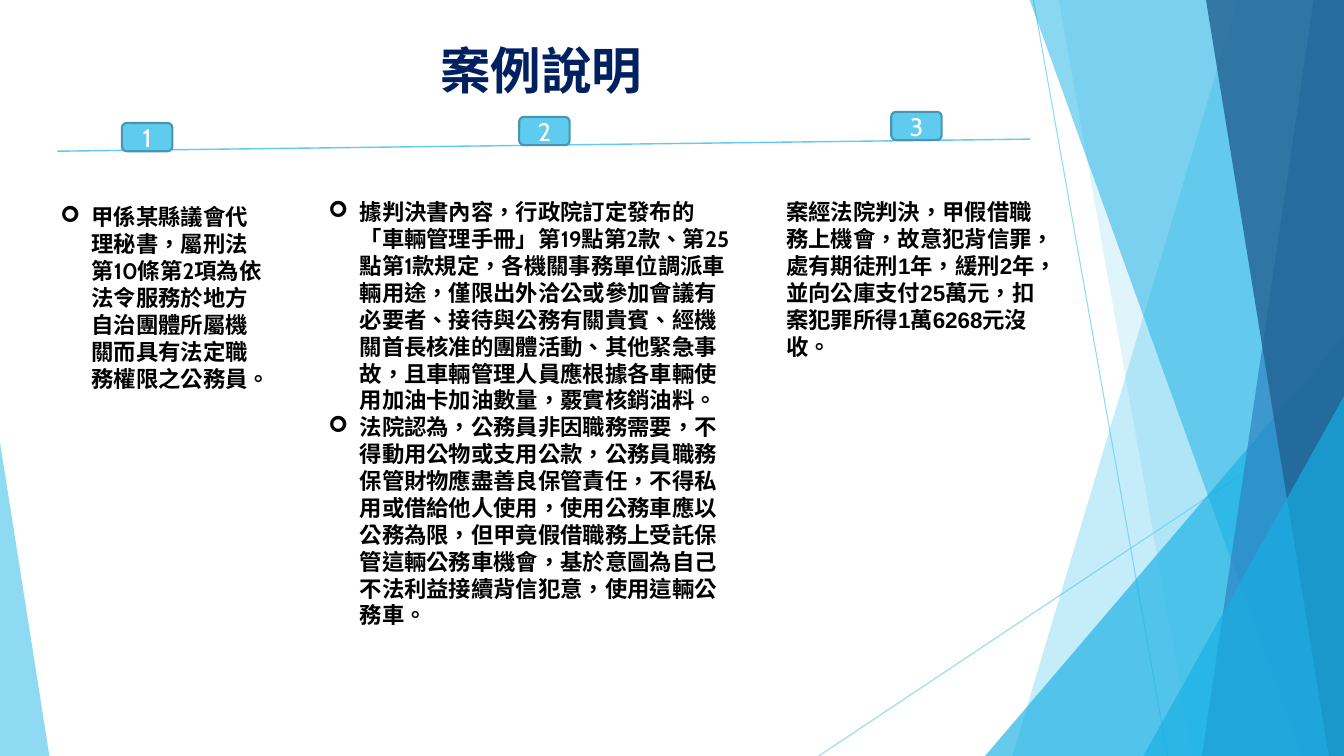
from pptx import Presentation
from pptx.dml.color import RGBColor as RGB
from pptx.enum.lang import MSO_LANGUAGE_ID as Lang
from pptx.enum.shapes import MSO_CONNECTOR as Conn, MSO_SHAPE as Kind
from pptx.enum.text import MSO_ANCHOR as Anchor, MSO_AUTO_SIZE as Fit, PP_ALIGN as Align
from pptx.oxml.ns import qn
from pptx.util import Inches, Pt
from lxml.etree import SubElement as Sub

# Content
TITLE = "案例說明"
COLS = [  # left, top, width, height, font key, bulleted, paragraphs
    (3.16, 1.92, 4.27, 4.68, "font", True, [
        "據判決書內容，行政院訂定發布的「車輛管理手冊」第19點第2款、第25點第1款規定，"
        "各機關事務單位調派車輛用途，僅限出外洽公或參加會議有必要者、接待與公務有關貴賓、"
        "經機關首長核准的團體活動、其他緊急事故，且車輛管理人員應根據各車輛使用加油卡加油數量，"
        "覈實核銷油料。",
        "法院認為，公務員非因職務需要，不得動用公物或支用公款，公務員職務保管財物應盡善良保管責任，"
        "不得私用或借給他人使用，使用公務車應以公務為限，但甲竟假借職務上受託保管這輛公務車機會，"
        "基於意圖為自己不法利益接續背信犯意，使用這輛公務車。"]),
    (7.7, 1.92, 2.78, 1.72, "plain", False, [
        "案經法院判決，甲假借職務上機會，故意犯背信罪，處有期徒刑1年，緩刑2年，"
        "並向公庫支付25萬元，扣案犯罪所得1萬6268元沒收。"]),
    (0.5, 1.97, 2.22, 2.26, "font", True, [
        "甲係某縣議會代理秘書，屬刑法第10條第2項為依法令服務於地方自治團體所屬機關"
        "而具有法定職務權限之公務員。"]),
]
STEPS = [("1", 1.21, 1.22), ("2", 5.15, 1.16), ("3", 8.84, 1.11)]

# Theme
THEME = dict(font="Cabin", plain="Arial", head=36, body=16, step=18,
             navy="002060", ink="000000", white="FFFFFF", sky="5FCBEF",
             edge="4696B1", cyan="17B0E4", blue="2E83C3", deep="226292")

# Background: slim lines, then bands (top x, foot x) and wedges (box, apex)
W, H, TOP = 13.33, 7.5, -0.01
RAYS = [((10.25, 0), (11.58, H)), ((W, 4.03), (8.12, H))]
BANDS = [
    ("band", (12.28, 10.04), "sky", 36),
    ("band", (10.5, 11.83), "sky", 20),
    ("wedge", (9.77, 3.33, 3.56, 4.17, 1), "cyan", 66),
    ("band", (10.21, 12.91), "cyan", 50),
    ("band", (13.03, 11.92), "blue", 70),
    ("band", (11.96, 13.18), "deep", 80),
    ("wedge", (11.34, 3.93, 1.99, 3.57, 1), "cyan", 66),
    ("wedge", (0, 4.39, 0.49, 3.11, 0), "sky", 70),
]

prs = Presentation()
prs.slide_width, prs.slide_height = Inches(W), Inches(H)
shapes = prs.slides.add_slide(prs.slide_layouts[6]).shapes


def color(key):
    return RGB.from_string(THEME[key])


def fade(part, pct):
    """Set the opacity of a solid fill or line."""
    for clr in part.iter(qn("a:srgbClr")):
        Sub(clr, qn("a:alpha"), val=str(pct * 1000))


def paint(shape, key):
    shape.shadow.inherit = False
    shape.fill.solid()
    shape.fill.fore_color.rgb = color(key)


def rule(start, end, width):
    line = shapes.add_connector(Conn.STRAIGHT, *map(Inches, start + end))
    line.line.color.rgb = color("sky")
    line.line.width = Pt(width)
    Sub(line._element.spPr, qn("a:effectLst"))
    return line


def write(para, text, size, ink, font="font", bold=True):
    run = para.add_run()
    run.text = text
    face = run.font
    face.name, face.size, face.bold = THEME[font], Pt(THEME[size]), bold
    face.color.rgb = color(ink)
    face.language_id = Lang.TRADITIONAL_CHINESE


def textbox(box, fit=Fit.NONE):
    frame = shapes.add_textbox(*map(Inches, box)).text_frame
    frame.word_wrap, frame.auto_size = True, fit
    return frame


def bullet(para):
    props = para._p.get_or_add_pPr()
    props.set("marL", str(Inches(0.31)))
    props.set("indent", str(Inches(-0.31)))
    Sub(props, qn("a:buFont"), typeface="Wingdings")
    Sub(props, qn("a:buChar"), char="➢")


# Background
for start, end in RAYS:
    fade(rule(start, end, 0.75)._element.spPr, 70)
for kind, geom, key, pct in BANDS:
    if kind == "band":
        head, foot = geom
        pts = [(Inches(x), Inches(y)) for x, y in
               ((head, TOP), (W, TOP), (W, H), (foot, H))]
        pen = shapes.build_freeform(*pts[0])
        pen.add_line_segments(pts[1:], close=True)
        shape = pen.convert_to_shape()
    else:
        *box, apex = geom
        shape = shapes.add_shape(Kind.ISOSCELES_TRIANGLE, *map(Inches, box))
        shape.adjustments[0] = apex
    paint(shape, key)
    shape.line.fill.background()
    fade(shape._element.spPr, pct)

# Title
write(textbox((4.27, 0.34, 2.35, 0.73)).paragraphs[0], TITLE, "head", "navy")

# Columns
for *box, font, marked, texts in COLS:
    frame = textbox(box, Fit.SHAPE_TO_FIT_TEXT)
    for i, text in enumerate(texts):
        para = frame.add_paragraph() if i else frame.paragraphs[0]
        if marked:
            bullet(para)
        write(para, text, "body", "ink", font)

# Timeline
rule((0.57, 1.5), (10.22, 1.38), 1)
for num, x, y in STEPS:
    step = shapes.add_shape(Kind.ROUNDED_RECTANGLE, *map(Inches, (x, y, 0.5, 0.28)))
    paint(step, "sky")
    step.line.color.rgb = color("edge")
    step.line.width = Pt(1.5)
    step.text_frame.vertical_anchor = Anchor.MIDDLE
    para = step.text_frame.paragraphs[0]
    para.alignment = Align.CENTER
    write(para, num, "step", "white", bold=False)

prs.save("out.pptx")
